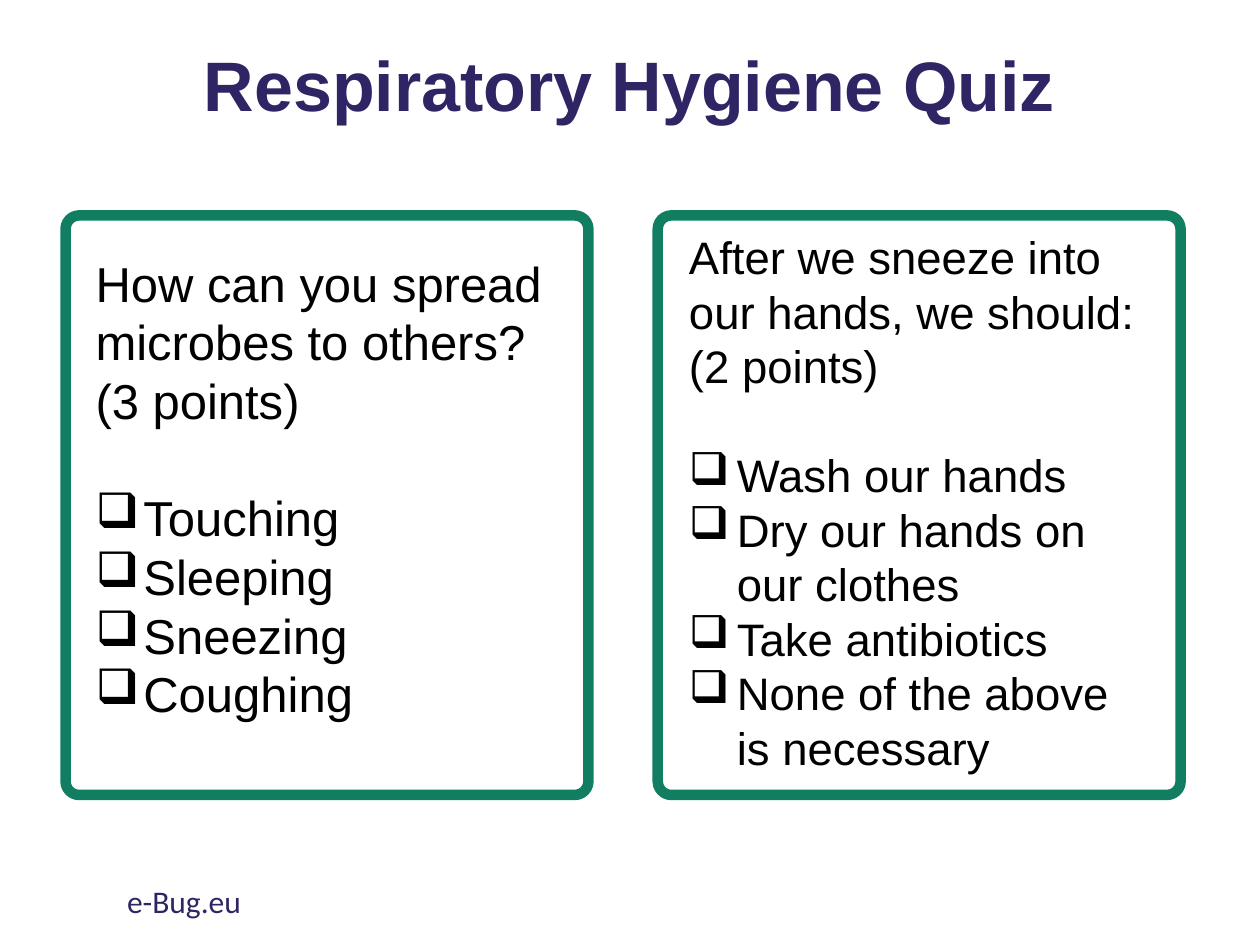
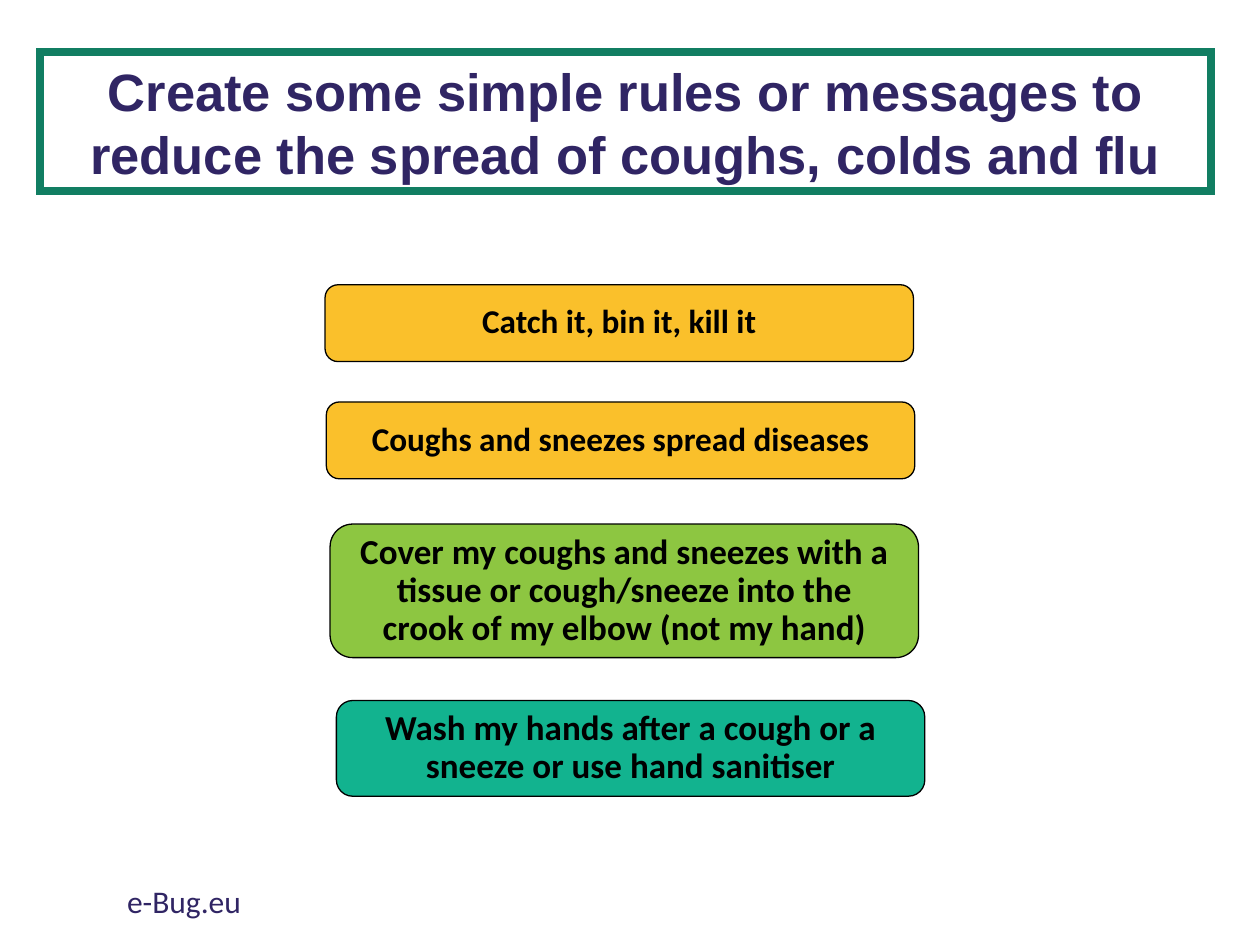
"""Build the respiratory hygiene quiz and the rules and messages slide."""
import dataclasses

import pptx
import pptx.dml.color
import pptx.enum.shapes
import pptx.enum.text
import pptx.oxml.ns
import pptx.util
from lxml import etree

Inches = pptx.util.Inches
Pt = pptx.util.Pt
Rounded = pptx.enum.shapes.MSO_SHAPE.ROUNDED_RECTANGLE
Align = pptx.enum.text.PP_ALIGN
Anchor = pptx.enum.text.MSO_ANCHOR

QUIZ_TITLE = "Respiratory Hygiene Quiz"
QUESTIONS = [
    {
        "lines": ["How can you spread microbes to others?", "(3 points)"],
        "answers": ["Touching", "Sleeping", "Sneezing", "Coughing"],
        "size": 28,
        "place": (0.66, 1.96, 3.88, 3.87),
    },
    {
        "lines": ["After we sneeze into our hands, we should:", "(2 points)"],
        "answers": ["Wash our hands", "Dry our hands on our clothes",
                    "Take antibiotics", "None of the above is necessary"],
        "size": 26,
        "place": (5.37, 1.77, 3.86, 4.48),
    },
]
RULES_TITLE = ("Create some simple rules or messages to reduce "
               "the spread of coughs, colds and flu")
RULES = [
    ("Catch it, bin it, kill it", "amber", 19, (2.58, 2.26), 0.61),
    ("Coughs and sneezes spread diseases", "amber", 19, (2.59, 3.19), 0.61),
    ("Cover my coughs and sneezes with a tissue or cough/sneeze into the "
     "crook of my elbow (not my hand)", "lime", 20, (2.62, 4.16), 1.06),
    ("Wash my hands after a cough or a sneeze or use hand sanitiser",
     "teal", 20, (2.67, 5.56), 0.76),
]
FOOTER = "e-Bug.eu"
FOOTER_PLACE = (0.91, 6.95, 3.38, 0.4)
FRAME = {"left": 0.52, "top": 1.71, "width": 4.15, "height": 4.6, "step": 4.7}
RULE_WIDTH = 4.67
ANSWER_INDENT = 0.38


@dataclasses.dataclass(frozen=True)
class Theme:
    """Colours, fonts and type sizes shared by the slides."""
    navy: str = "302564"
    green: str = "117E62"
    amber: str = "FAC02B"
    lime: str = "8DC641"
    teal: str = "12B38F"
    black: str = "000000"
    white: str = "FFFFFF"
    heading_font: str = "Arial"
    label_font: str = "Calibri"
    quiz_title: int = 40
    rules_title: int = 30
    footer: int = 18
    line_height: float = 1.19


THEME = Theme()


def rgb(value):
    """Turn a hex string into a colour."""
    return pptx.dml.color.RGBColor.from_string(value)


def apply(target, values):
    """Set each named value on the target."""
    for name, value in values.items():
        setattr(target, name, value)


def set_place(shape, place):
    """Move and size a shape, in inches."""
    apply(shape, dict(zip(("left", "top", "width", "height"), map(Inches, place))))


def set_outline(shape, colour, width):
    """Give a shape a solid outline."""
    shape.line.color.rgb = rgb(colour)
    shape.line.width = Pt(width)


def set_fill(shape, colour):
    """Give a shape a solid fill."""
    shape.fill.solid()
    shape.fill.fore_color.rgb = rgb(colour)


def write(para, text, font, size, colour, bold=False, **layout):
    """Write one formatted span into a paragraph."""
    apply(para, layout)
    span = para.add_run()
    span.text = text
    apply(span.font, {"name": font, "size": Pt(size), "bold": bold})
    span.font.color.rgb = rgb(colour)


def add_text_box(page, place):
    """Add a wrapping text box and return its text frame."""
    frame = page.shapes.add_textbox(*map(Inches, place)).text_frame
    frame.word_wrap = True
    return frame


def add_page(deck, title, size, place, line_spacing):
    """Add a slide with its title and footer, and return it."""
    page = deck.slides.add_slide(deck.slide_layouts[5])
    heading = page.shapes.title
    set_place(heading, place)
    apply(heading.text_frame, {
        "word_wrap": True,
        "vertical_anchor": Anchor.MIDDLE,
        "auto_size": pptx.enum.text.MSO_AUTO_SIZE.NONE,
    })
    write(heading.text_frame.paragraphs[0], title, THEME.heading_font, size,
          THEME.navy, True, alignment=Align.CENTER, line_spacing=line_spacing)
    write(add_text_box(page, FOOTER_PLACE).paragraphs[0], FOOTER,
          THEME.label_font, THEME.footer, THEME.navy)
    return page


def add_rounded(page, place, radius):
    """Add a rounded rectangle without a shadow."""
    box = page.shapes.add_shape(Rounded, *map(Inches, place))
    box.shadow.inherit = False
    box.adjustments[0] = radius
    return box


def add_checkbox(para):
    """Give a paragraph a hanging checkbox bullet."""
    properties = para._p.get_or_add_pPr()
    indent = Inches(ANSWER_INDENT)
    properties.set("marL", str(indent))
    properties.set("indent", str(-indent))
    bullet = etree.SubElement(properties, pptx.oxml.ns.qn("a:buChar"))
    bullet.set("char", "❑")


def add_question(page, position, question):
    """Add one framed question with its answers."""
    left = FRAME["left"] + position * FRAME["step"]
    border = add_rounded(
        page, (left, FRAME["top"], FRAME["width"], FRAME["height"]), 0.026)
    border.fill.background()
    set_outline(border, THEME.green, 6)

    frame = add_text_box(page, question["place"])
    size = question["size"]
    lines, answers = question["lines"], question["answers"]
    for index, text in enumerate(lines + answers):
        para = frame.add_paragraph() if index else frame.paragraphs[0]
        if index >= len(lines):
            add_checkbox(para)
        if index == len(lines):
            para.space_before = Pt(round(size * THEME.line_height))
        write(para, text, THEME.heading_font, size, THEME.black)


def add_rule(page, text, colour, size, corner, height):
    """Add one coloured rule card."""
    card = add_rounded(page, (*corner, RULE_WIDTH, height), 0.17)
    set_fill(card, getattr(THEME, colour))
    set_outline(card, THEME.black, 0.75)
    apply(card.text_frame, {
        "word_wrap": True,
        "vertical_anchor": Anchor.MIDDLE,
        "margin_left": Inches(0.18),
        "margin_right": Inches(0.18),
        "margin_top": 0,
        "margin_bottom": 0,
    })
    write(card.text_frame.paragraphs[0], text, THEME.label_font, size,
          THEME.black, True, alignment=Align.CENTER, line_spacing=0.9)


def main():
    """Build and save the deck."""
    deck = pptx.Presentation()
    apply(deck, {"slide_width": Inches(10), "slide_height": Inches(7.5)})

    quiz = add_page(deck, QUIZ_TITLE, THEME.quiz_title, (1.32, 0, 7.35, 1.41), 0.9)
    for position, question in enumerate(QUESTIONS):
        add_question(quiz, position, question)

    rules = add_page(deck, RULES_TITLE, THEME.rules_title, (0.32, 0.41, 9.29, 1.11), 1.0)
    banner = rules.shapes.title
    set_fill(banner, THEME.white)
    set_outline(banner, THEME.green, 4.5)
    corner = etree.SubElement(banner.line._get_or_add_ln(), pptx.oxml.ns.qn("a:miter"))
    corner.set("lim", "800000")
    for rule in RULES:
        add_rule(rules, *rule)

    deck.save("out.pptx")


if __name__ == "__main__":
    main()
